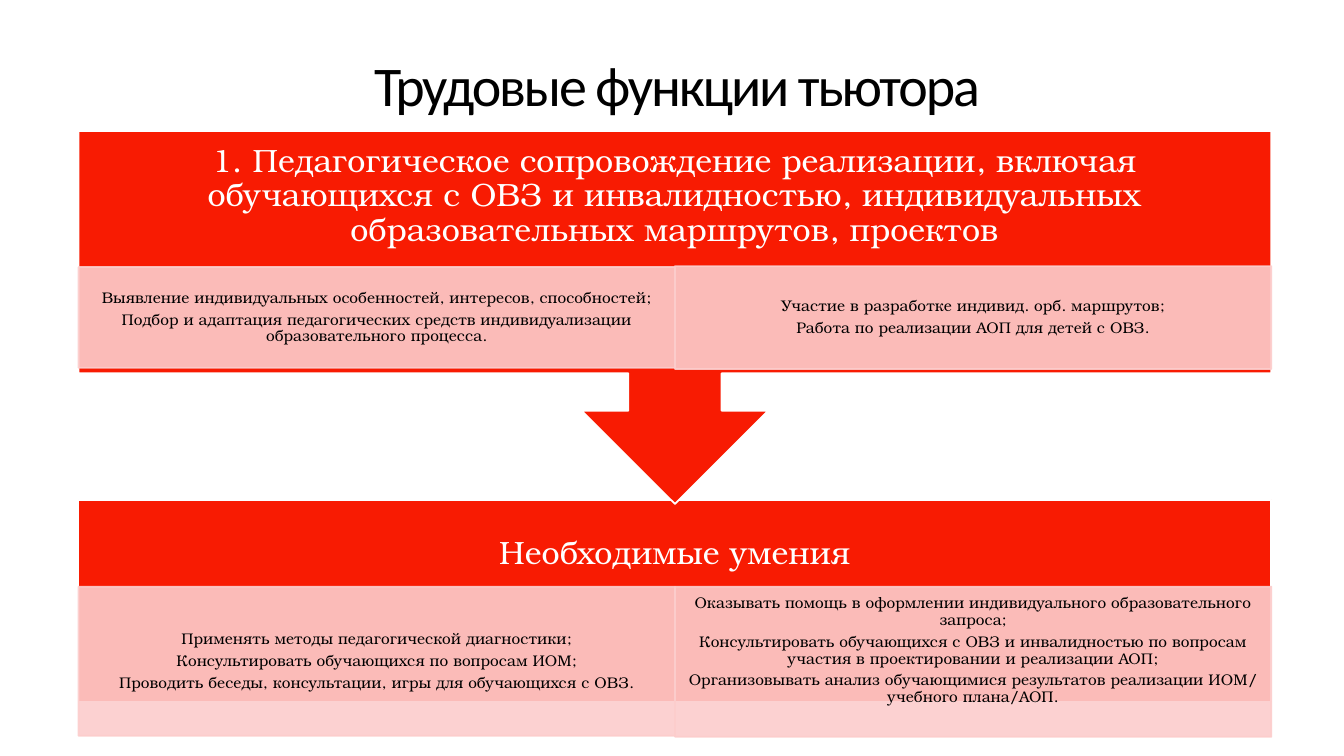
"""Build a slide on a tutor's job functions: two headed blocks joined by an arrow."""
from dataclasses import dataclass

from lxml import etree
from pptx import Presentation, util as u
from pptx.dml.color import RGBColor
from pptx.enum import shapes, text
from pptx.oxml.ns import qn


@dataclass(frozen=True)
class Theme:
    red: str = "F81B02"
    pink: str = "FCCDCC"
    white: str = "FFFFFF"
    black: str = "000000"
    title_font: str = "Calibri"
    body_font: str = "TeX Gyre Bonum"
    title_size: int = 40
    heading_size: int = 23
    duty_size: int = 11
    outline: float = 1.25
    pink_alpha: int = 90


THEME = Theme()
SLIDE_W, SLIDE_H = 13.33, 7.5
LEFT, GRID_W = 0.78, 11.83

TITLE = {"words": "Трудовые функции тьютора", "at": (0.9, 0.18, 11.63, 1.41)}

BLOCKS = [
    {
        "heading": "Необходимые умения",
        "outline": shapes.MSO_SHAPE.RECTANGLE,
        "top": 4.96, "height": 2, "heading_height": 1.08,
        "duties": [
            {"top": 5.82, "height": 1.48, "lines": [
                "Применять методы педагогической диагностики;",
                "Консультировать обучающихся по вопросам ИОМ;",
                "Проводить беседы, консультации, игры для обучающихся с ОВЗ.",
            ]},
            {"top": 5.82, "height": 1.49, "bottom_inset": 0.24, "lines": [
                "Оказывать помощь в оформлении индивидуального образовательного запроса;",
                "Консультировать обучающихся с ОВЗ и инвалидностью по вопросам участия "
                "в проектировании и реализации АОП;",
                "Организовывать анализ обучающимися результатов реализации ИОМ/ "
                "учебного плана/АОП.",
            ]},
        ],
    },
    {
        "heading": "1. Педагогическое сопровождение реализации, включая обучающихся с ОВЗ "
                   "и инвалидностью, индивидуальных образовательных маршрутов, проектов",
        "outline": shapes.MSO_SHAPE.DOWN_ARROW_CALLOUT,
        "top": 1.3, "height": 3.7, "heading_height": 1.3,
        "duties": [
            {"top": 2.65, "height": 1, "lines": [
                "Выявление индивидуальных особенностей, интересов, способностей;",
                "Подбор и адаптация педагогических средств индивидуализации "
                "образовательного процесса.",
            ]},
            {"top": 2.64, "height": 1.02, "lines": [
                "Участие в разработке индивид. орб. маршрутов;",
                "Работа по реализации АОП для детей с ОВЗ.",
            ]},
        ],
    },
]


def inches(lengths):
    return [u.Inches(length) for length in lengths]


def write(holder, lines, *, size, color, font=THEME.body_font, insets=(0.18,) * 4,
          leading=0.9, gap=0.35, tracking=None):
    frame = holder.text_frame
    frame.word_wrap = True
    frame.vertical_anchor = text.MSO_ANCHOR.MIDDLE
    (frame.margin_left, frame.margin_top,
     frame.margin_right, frame.margin_bottom) = inches(insets)
    for index, line in enumerate(lines):
        paragraph = frame.add_paragraph() if index else frame.paragraphs[0]
        paragraph.alignment = text.PP_ALIGN.CENTER
        paragraph.line_spacing = leading
        paragraph.space_after = u.Pt(gap * size)
        run = paragraph.add_run()
        run.text = line
        run.font.name, run.font.size = font, u.Pt(size)
        run.font.color.rgb = RGBColor.from_string(color)
        if tracking:
            run.font._element.set("spc", str(int(tracking * 100)))


def add_panel(slide, preset, at, fill, line, alpha=None):
    panel = slide.shapes.add_shape(preset, *inches(at))
    panel.shadow.inherit = False
    panel.fill.solid()
    panel.fill.fore_color.rgb = RGBColor.from_string(fill)
    panel.line.color.rgb = RGBColor.from_string(line)
    panel.line.width = u.Pt(THEME.outline)
    if alpha:
        for color in panel._element.spPr.iter(qn("a:srgbClr")):
            etree.SubElement(color, qn("a:alpha")).set("val", str(alpha * 1000))
    return panel


def add_block(slide, block):
    add_panel(slide, block["outline"], (LEFT, block["top"], GRID_W, block["height"]),
              THEME.red, THEME.white)
    heading = slide.shapes.add_textbox(
        *inches((LEFT, block["top"], GRID_W, block["heading_height"])))
    write(heading, [block["heading"]], size=THEME.heading_size, color=THEME.white)

    column_w = GRID_W / len(block["duties"])
    for column, duty in enumerate(block["duties"]):
        cell = add_panel(slide, shapes.MSO_SHAPE.RECTANGLE,
                         (LEFT + column * column_w, duty["top"], column_w, duty["height"]),
                         THEME.pink, THEME.pink, THEME.pink_alpha)
        write(cell, duty["lines"], size=THEME.duty_size, color=THEME.black,
              insets=(0.09, 0.02, 0.09, duty.get("bottom_inset", 0.02)))


def main():
    deck = Presentation()
    deck.slide_width, deck.slide_height = inches((SLIDE_W, SLIDE_H))
    slide = deck.slides.add_slide(deck.slide_layouts[6])
    title = slide.shapes.add_textbox(*inches(TITLE["at"]))
    write(title, [TITLE["words"]], size=THEME.title_size, color=THEME.black,
          font=THEME.title_font, insets=(0.25,) * 4, leading=0.85, gap=0, tracking=-1.5)
    for block in BLOCKS:
        add_block(slide, block)
    deck.save("out.pptx")


if __name__ == "__main__":
    main()
